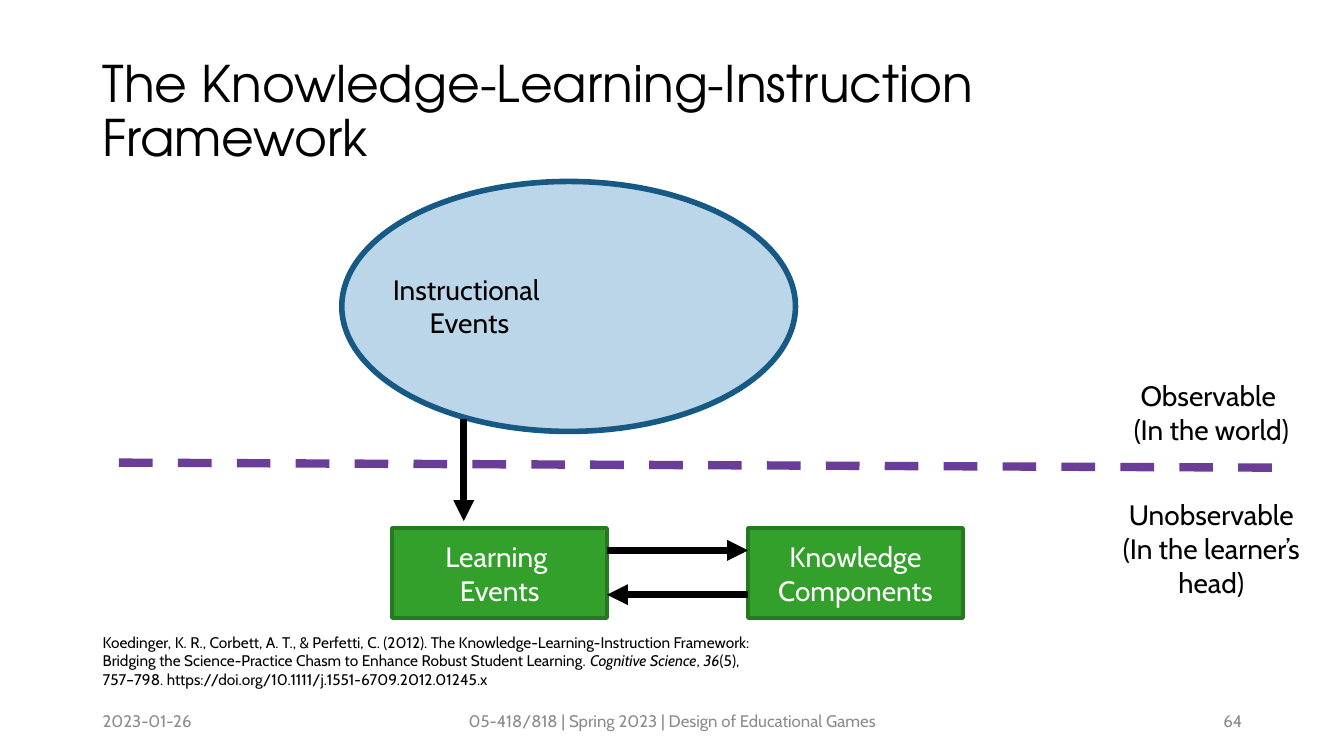
from lxml import etree
from pptx import Presentation
from pptx.dml.color import RGBColor
from pptx.enum.dml import MSO_LINE
from pptx.enum.shapes import MSO_CONNECTOR, MSO_SHAPE
from pptx.enum.text import MSO_ANCHOR, PP_ALIGN
from pptx.oxml.ns import qn
from pptx.util import Inches, Pt

LEFT, CENTER, RIGHT = PP_ALIGN.LEFT, PP_ALIGN.CENTER, PP_ALIGN.RIGHT
TOP, MIDDLE = MSO_ANCHOR.TOP, MSO_ANCHOR.MIDDLE
OVAL, RECTANGLE = MSO_SHAPE.OVAL, MSO_SHAPE.RECTANGLE
STRAIGHT = MSO_CONNECTOR.STRAIGHT
DASH = MSO_LINE.DASH

BODY_FONT = "Cabin"
TITLE_FONT = "TeX Gyre Adventor"
BLACK, WHITE, GRAY = "000000", "FFFFFF", "8C8C8C"


def color(hex_string):
    return RGBColor.from_string(hex_string)


def write(shape, paragraphs, size, hex_string, align=LEFT, anchor=TOP, font=BODY_FONT):
    """Fill a shape with paragraphs, each a list of (text, italic) runs."""
    frame = shape.text_frame
    frame.word_wrap = True
    frame.vertical_anchor = anchor
    for index, runs in enumerate(paragraphs):
        paragraph = frame.paragraphs[0] if index == 0 else frame.add_paragraph()
        paragraph.alignment = align
        for text, italic in runs:
            run = paragraph.add_run()
            run.text = text
            run.font.name = font
            run.font.size = Pt(size)
            run.font.italic = italic
            run.font.color.rgb = color(hex_string)


presentation = Presentation()
presentation.slide_width = Inches(13.33)
presentation.slide_height = Inches(7.5)
slide = presentation.slides.add_slide(presentation.slide_layouts[6])
shapes = slide.shapes

# Title
title = shapes.add_textbox(Inches(0.92), Inches(0.4), Inches(11.5), Inches(1.45))
write(title, [[("The Knowledge-Learning-Instruction Framework", False)]],
      36, BLACK, anchor=MIDDLE, font=TITLE_FONT)
title.text_frame.paragraphs[0].line_spacing = 0.9

# Translucent ellipse around the instructional events
ellipse = shapes.add_shape(OVAL, Inches(3.39), Inches(1.8), Inches(4.5), Inches(2.48))
ellipse.shadow.inherit = False
ellipse.fill.solid()
ellipse.fill.fore_color.rgb = color("1F78B4")
fill_color = ellipse.fill._xPr.find(qn("a:solidFill"))[0]
etree.SubElement(fill_color, qn("a:alpha"), val="30000")
ellipse.line.color.rgb = color("175985")
ellipse.line.width = Pt(4)

# Green boxes
for left, lines in [(3.89, ["Learning ", "Events"]), (7.42, ["Knowledge", "Components"])]:
    box = shapes.add_shape(RECTANGLE, Inches(left), Inches(5.24), Inches(2.13), Inches(0.89))
    box.shadow.inherit = False
    box.fill.solid()
    box.fill.fore_color.rgb = color("33A02C")
    box.line.color.rgb = color("267821")
    box.line.width = Pt(3)
    write(box, [[(line, False)] for line in lines], 20, WHITE, CENTER, MIDDLE)

# Black labels
labels = [
    (3.63, 2.65, 2.05, 0.76, ["Instructional ", "Events"]),
    (10.96, 3.71, 2.11, 0.77, ["Observable ", "(In the world)"]),
    (10.96, 4.89, 2.11, 1.11, ["Unobservable", "(In the learner’s head)"]),
]
for left, top, width, height, lines in labels:
    label = shapes.add_textbox(Inches(left), Inches(top), Inches(width), Inches(height))
    write(label, [[(line, False)] for line in lines], 20, BLACK, CENTER)

# Arrows and the dashed divider
connectors = [
    (4.6, 4.16, 4.6, 5.17, BLACK, 5, True),
    (6.02, 5.46, 7.42, 5.46, BLACK, 5, True),
    (7.42, 5.9, 6.02, 5.9, BLACK, 5, True),
    (1.18, 4.59, 12.75, 4.64, "6A3D99", 6, False),
]
for start_x, start_y, end_x, end_y, line_color, width, is_arrow in connectors:
    connector = shapes.add_connector(STRAIGHT, Inches(start_x), Inches(start_y),
                                     Inches(end_x), Inches(end_y))
    connector.line.color.rgb = color(line_color)
    connector.line.width = Pt(width)
    if is_arrow:
        etree.SubElement(connector.line._get_or_add_ln(), qn("a:tailEnd"), type="triangle")
    else:
        connector.line.dash_style = DASH
    etree.SubElement(connector._element.spPr, qn("a:effectLst"))

# Citation
citation = shapes.add_textbox(Inches(0.92), Inches(6.23), Inches(6.67), Inches(0.84))
write(citation, [[
    ("Koedinger, K. R., Corbett, A. T., & Perfetti, C. (2012). "
     "The Knowledge-Learning-Instruction Framework: Bridging the Science-Practice Chasm "
     "to Enhance Robust Student Learning. ", False),
    ("Cognitive Science", True),
    (", ", False),
    ("36", True),
    ("(5), 757–798. https://doi.org/10.1111/j.1551-6709.2012.01245.x", False),
]], 11, BLACK)

# Footer
footers = [
    (0.92, 3, "2023-01-26", LEFT),
    (4.42, 4.5, "05-418/818 | Spring 2023 | Design of Educational Games", CENTER),
    (9.42, 3, "64", RIGHT),
]
for left, width, text, align in footers:
    footer = shapes.add_textbox(Inches(left), Inches(6.95), Inches(width), Inches(0.4))
    write(footer, [[(text, False)]], 12, GRAY, align, MIDDLE)

presentation.save("out.pptx")
